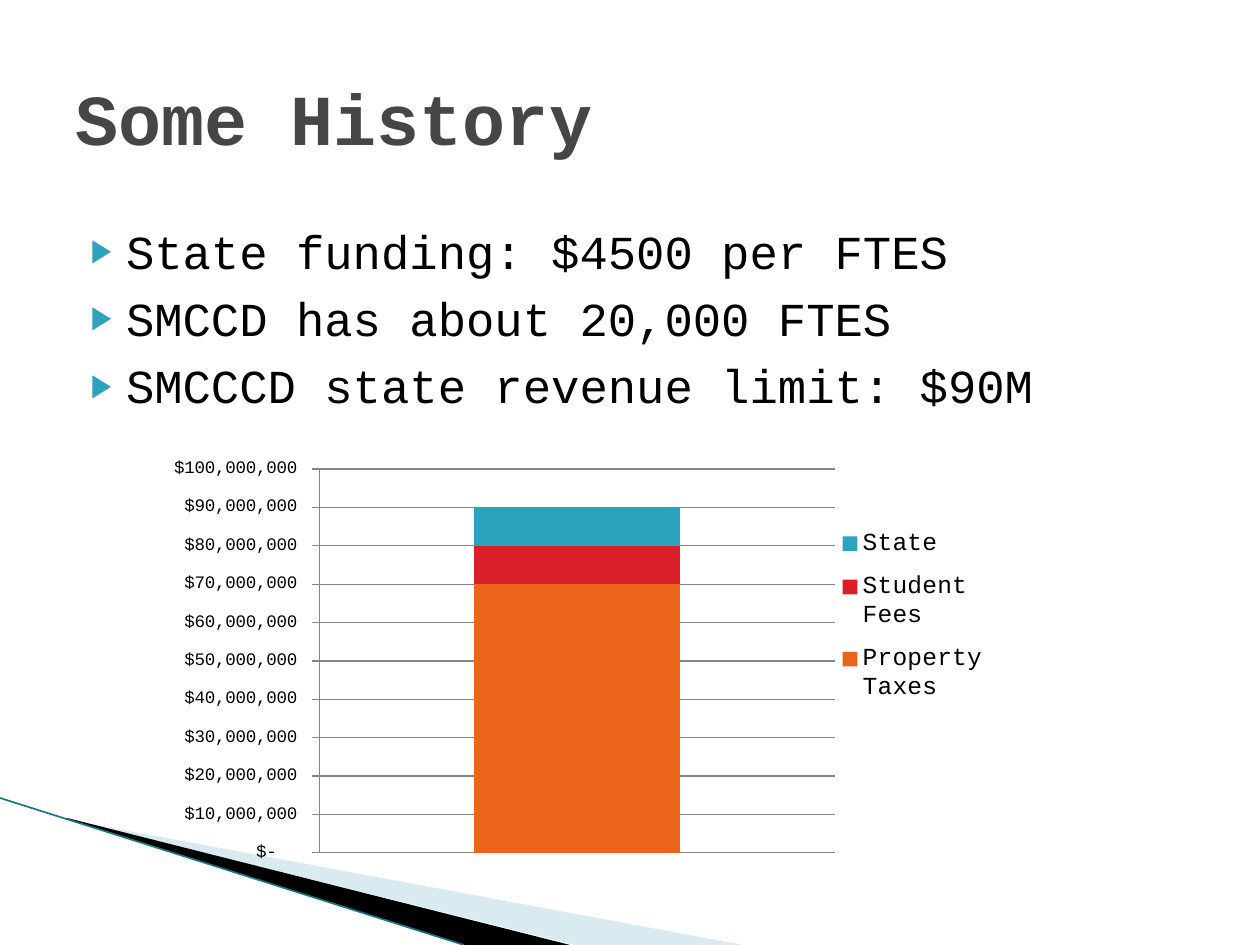
from lxml import etree
from pptx import Presentation
from pptx import util as u
from pptx.chart.data import CategoryChartData
from pptx.dml.color import RGBColor
from pptx.enum import chart as ch, shapes, text
from pptx.oxml import parse_xml
from pptx.oxml.ns import nsdecls, qn

FONT = "Courier New"
COLORS = {"title": "464646", "text": "000000", "teal": "2DA2BF", "red": "DA1F28",
          "orange": "EB641B", "grid": "868686", "pale": "A0CBDC", "black": "000000",
          "edge": "1B7587"}
TITLE = "Some History"
BULLETS = ["State funding: $4500 per FTES",
           "SMCCD has about 20,000 FTES",
           "SMCCCD state revenue limit: $90M"]
SERIES = [("Property Taxes", 70000000, "orange"),
          ("Student Fees", 10000000, "red"),
          ("State", 10000000, "teal")]
MONEY = '_("$"* #,##0_);_("$"* \\(#,##0\\);_("$"* "-"??_);_(@_)'
WEDGES = [("pale", 40, [(69, 820), (743, 945), (575, 945), (69, 819)]),
          ("black", 100, [(67, 818), (570, 945), (464, 945), (67, 819)])]
EDGE = (0, 798, 464, 945)
TITLE_BOX = (63, 38, 1134, 157)
BODY_BOX = (63, 204, 1134, 624)
CHART_BOX = (147, 451, 872, 420)
PLOT_BOX = (320, 469, 515, 384)
LEGEND_BOX = (835, 515, 155, 202)


def px(n):
    return u.Emu(n * 914400 // 126)


def rgb(name):
    return RGBColor.from_string(COLORS[name])


def style(font, size, color, bold=False):
    font.name, font.size, font.bold = FONT, u.Pt(size), bold
    font.color.rgb = rgb(color)


def place(sp, box):
    sp.left, sp.top, sp.width, sp.height = map(px, box)


def add_run(p, words, size, color, bold=False):
    r = p.add_run()
    r.text = words
    style(r.font, size, color, bold)


def add_bullet(p):
    pPr = p._p.get_or_add_pPr()
    pPr.set("marL", str(u.Inches(0.4)))
    pPr.set("indent", str(u.Inches(-0.28)))
    for xml in (f'<a:buClr {nsdecls("a")}><a:srgbClr val="{COLORS["teal"]}"/></a:buClr>',
                f'<a:buSzPct {nsdecls("a")} val="68000"/>',
                f'<a:buFont {nsdecls("a")} typeface="Arial"/>',
                f'<a:buChar {nsdecls("a")} char="▶"/>'):
        pPr.append(parse_xml(xml))


def set_layout(el, box, inner=False):
    old = el.find(qn("c:layout"))
    if old is not None:
        el.remove(old)
    left, top, width, height = CHART_BOX
    parts = [("xMode", "edge"), ("yMode", "edge"),
             ("x", round((box[0] - left) / width, 3)),
             ("y", round((box[1] - top) / height, 3)),
             ("w", round(box[2] / width, 3)), ("h", round(box[3] / height, 3))]
    if inner:
        parts.insert(0, ("layoutTarget", "inner"))
    body = "".join(f'<c:{k} val="{v}"/>' for k, v in parts)
    layout = parse_xml(f'<c:layout {nsdecls("c")}><c:manualLayout>{body}</c:manualLayout></c:layout>')
    if inner:
        el.insert(0, layout)
    else:
        el.find(qn("c:legendPos")).addnext(layout)


def add_decoration(s):
    for color, alpha, points in WEDGES:
        fb = s.shapes.build_freeform(*points[0], scale=914400 / 126)
        fb.add_line_segments(points[1:], close=True)
        sp = fb.convert_to_shape()
        sp.shadow.inherit = False
        sp.fill.solid()
        sp.fill.fore_color.rgb = rgb(color)
        sp.line.fill.background()
        if alpha < 100:
            clr = sp.element.spPr.find(".//" + qn("a:srgbClr"))
            etree.SubElement(clr, qn("a:alpha"), val=str(alpha * 1000))
    line = s.shapes.add_connector(shapes.MSO_CONNECTOR.STRAIGHT, *map(px, EDGE))
    line.line.color.rgb = rgb("edge")
    line.line.width = u.Pt(0.95)
    etree.SubElement(line.element.spPr, qn("a:effectLst"))


def add_text(s):
    title, body = s.shapes.title, s.placeholders[1]
    for sp, box in ((body, BODY_BOX), (title, TITLE_BOX)):
        place(sp, box)
        s.shapes.element.append(sp.element)
        sp.text_frame.word_wrap = True
        sp.text_frame.auto_size = text.MSO_AUTO_SIZE.NONE
    title.text_frame.vertical_anchor = text.MSO_ANCHOR.MIDDLE
    p = title.text_frame.paragraphs[0]
    p.alignment = text.PP_ALIGN.LEFT
    add_run(p, TITLE, 41, "title", True)
    tf = body.text_frame
    tf.margin_top = px(18)
    for i, words in enumerate(BULLETS):
        p = tf.add_paragraph() if i else tf.paragraphs[0]
        p.space_before = u.Pt(6 if i else 0)
        add_bullet(p)
        add_run(p, words, 27, "text")


def add_revenue_chart(s):
    data = CategoryChartData(number_format=MONEY)
    data.categories = ["1"]
    for name, value, _ in SERIES:
        data.add_series(name, [value])
    chart = s.shapes.add_chart(ch.XL_CHART_TYPE.COLUMN_STACKED,
                               *map(px, CHART_BOX), data).chart
    chart.has_title = False
    style(chart.font, 10, "text")
    plot = chart.plots[0]
    plot.gap_width, plot.overlap, plot.vary_by_categories = 150, 100, False
    for ser, (_, _, color) in zip(plot.series, SERIES):
        ser.format.fill.solid()
        ser.format.fill.fore_color.rgb = rgb(color)
    chart.category_axis.visible = False
    axis = chart.value_axis
    axis.minimum_scale, axis.maximum_scale, axis.major_unit = 0, 100000000, 10000000
    axis.major_tick_mark = ch.XL_TICK_MARK.OUTSIDE
    axis.has_major_gridlines = True
    axis.tick_labels.number_format = MONEY
    axis.tick_labels.number_format_is_linked = False
    for fmt in (axis.format, axis.major_gridlines.format):
        fmt.line.color.rgb = rgb("grid")
        fmt.line.width = u.Pt(0.75)
    chart.has_legend = True
    legend = chart.legend
    legend.position = ch.XL_LEGEND_POSITION.RIGHT
    legend.include_in_layout = False
    style(legend.font, 14, "text")
    plot_area = chart.element.find(".//" + qn("c:plotArea"))
    set_layout(plot_area, PLOT_BOX, inner=True)
    set_layout(chart.element.find(".//" + qn("c:legend")), LEGEND_BOX)


def main():
    prs = Presentation()
    prs.slide_width, prs.slide_height = u.Inches(10), u.Inches(7.5)
    s = prs.slides.add_slide(prs.slide_layouts[1])
    add_decoration(s)
    add_text(s)
    add_revenue_chart(s)
    prs.save("out.pptx")


if __name__ == "__main__":
    main()
